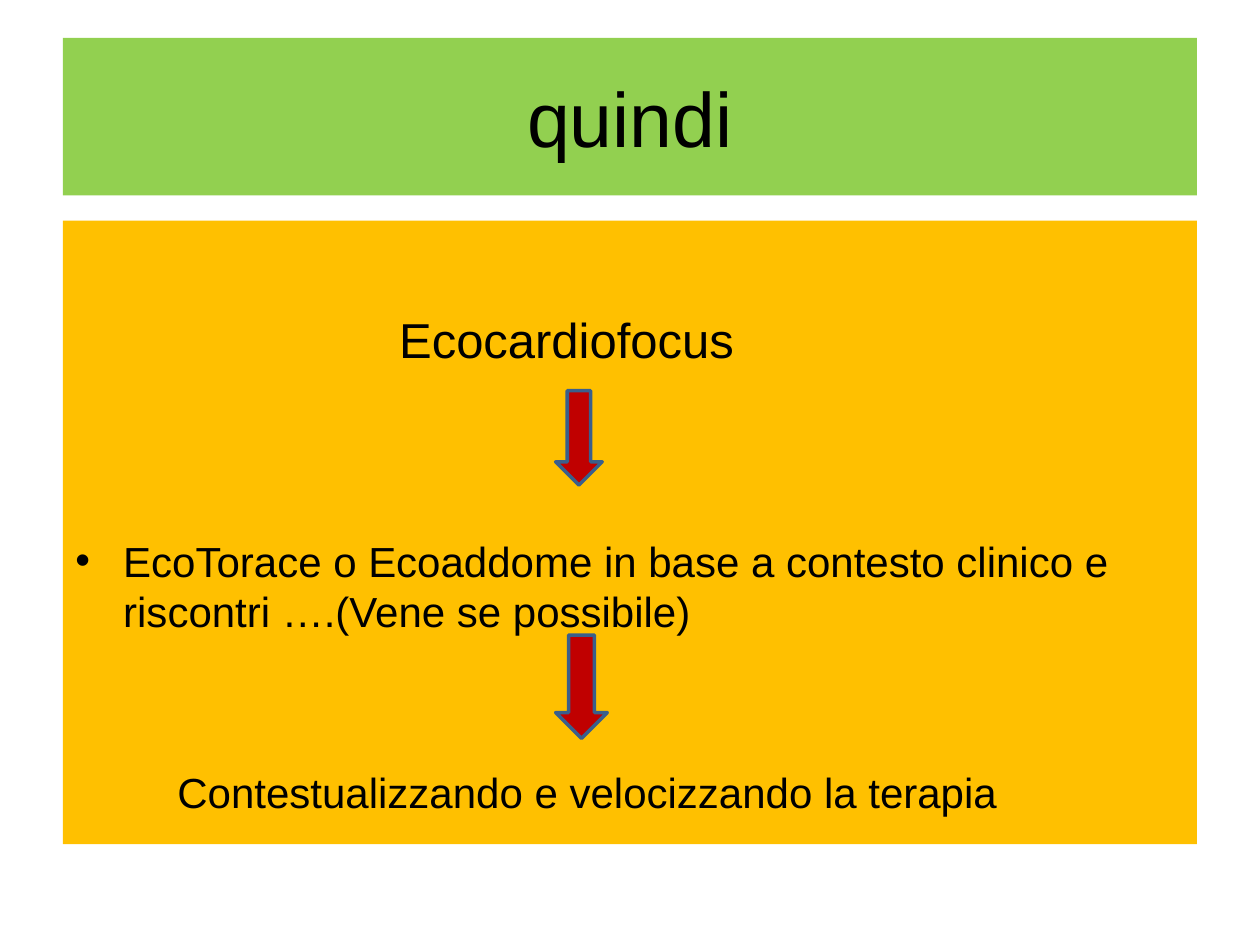
from dataclasses import dataclass

from lxml.etree import SubElement
from pptx import Presentation
from pptx.dml.color import RGBColor
from pptx.enum.shapes import MSO_SHAPE
from pptx.enum.text import MSO_ANCHOR, PP_ALIGN
from pptx.oxml.ns import qn
from pptx.util import Inches, Pt


@dataclass(frozen=True)
class Theme:
    font: str = "Arial"
    text: str = "000000"
    title_fill: str = "92D050"
    body_fill: str = "FFC000"
    arrow_fill: str = "C00000"
    arrow_line: str = "3A5F8C"
    title_size: int = 44
    lead_size: int = 28
    body_size: int = 24


@dataclass(frozen=True)
class Box:
    left: float
    top: float
    width: float
    height: float


@dataclass(frozen=True)
class Line:
    text: str
    size: int
    indent: float = 0
    before: float = 0
    align: PP_ALIGN = PP_ALIGN.LEFT
    bullet: bool = False


THEME = Theme()
TITLE = Box(0.5, 0.3, 9, 1.25)
BODY = Box(0.5, 1.75, 9, 4.95)
ARROWS = [Box(4.41, 3.1, 0.37, 0.75), Box(4.41, 5.04, 0.41, 0.82)]
TITLE_LINES = [Line("quindi", THEME.title_size, align=PP_ALIGN.CENTER)]
BODY_LINES = [
    Line("Ecocardiofocus", THEME.lead_size, indent=2.57),
    Line("EcoTorace o Ecoaddome in base a contesto clinico e riscontri ….(Vene se possibile)",
         THEME.body_size, indent=0.38, before=95, bullet=True),
    Line("Contestualizzando e velocizzando la terapia",
         THEME.body_size, indent=0.81, before=74.5),
]


def add_box(s, kind: MSO_SHAPE, box: Box, fill: str):
    sp = s.shapes.add_shape(kind, Inches(box.left), Inches(box.top),
                            Inches(box.width), Inches(box.height))
    sp.shadow.inherit = False
    sp.fill.solid()
    sp.fill.fore_color.rgb = RGBColor.from_string(fill)
    sp.line.fill.background()
    return sp


def add_panel(s, box: Box, fill: str, lines: list[Line],
              anchor: MSO_ANCHOR, inset: float) -> None:
    tf = add_box(s, MSO_SHAPE.RECTANGLE, box, fill).text_frame
    tf.word_wrap = True
    tf.vertical_anchor = anchor
    tf.margin_top = Inches(inset)
    for i, line in enumerate(lines):
        p = tf.add_paragraph() if i else tf.paragraphs[0]
        p.alignment = line.align
        if i:
            p.space_before = Pt(line.before)
        pPr = p._p.get_or_add_pPr()
        pPr.set("marL", str(Inches(line.indent)))
        pPr.set("indent", str(-Inches(line.indent) if line.bullet else 0))
        if line.bullet:
            SubElement(pPr, qn("a:buFont"), typeface=THEME.font)
            SubElement(pPr, qn("a:buChar"), char="•")
        r = p.add_run()
        r.text = line.text
        r.font.name = THEME.font
        r.font.size = Pt(line.size)
        r.font.color.rgb = RGBColor.from_string(THEME.text)


def add_arrow(s, box: Box) -> None:
    sp = add_box(s, MSO_SHAPE.DOWN_ARROW, box, THEME.arrow_fill)
    sp.line.color.rgb = RGBColor.from_string(THEME.arrow_line)
    sp.line.width = Pt(2)


def main() -> None:
    """Build the ultrasound workflow slide."""
    prs = Presentation()
    prs.slide_width, prs.slide_height = Inches(10), Inches(7.5)
    s = prs.slides.add_slide(prs.slide_layouts[6])
    add_panel(s, TITLE, THEME.title_fill, TITLE_LINES, MSO_ANCHOR.MIDDLE, 0.05)
    add_panel(s, BODY, THEME.body_fill, BODY_LINES, MSO_ANCHOR.TOP, 0.71)
    for box in ARROWS:
        add_arrow(s, box)
    prs.save("out.pptx")


if __name__ == "__main__":
    main()
